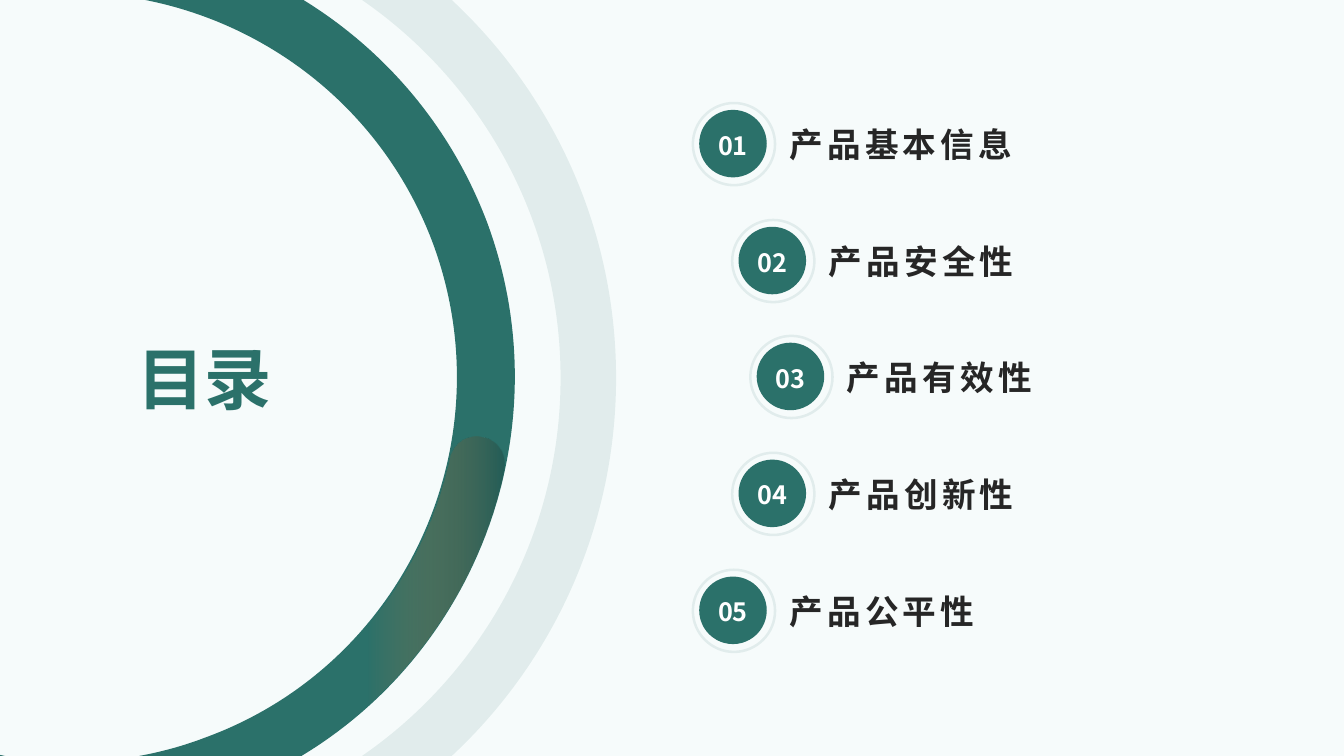
from lxml import etree
from pptx import Presentation
from pptx import util as u
from pptx.dml import color
from pptx.enum import shapes, text
from pptx.oxml import ns

TITLE = "目录"
ENTRIES = [
    ("产品基本信息", 686, 101),
    ("产品安全性", 725, 217),
    ("产品有效性", 743, 332),
    ("产品创新性", 725, 448),
    ("产品公平性", 686, 564),
]
COLORS = {
    "page": "F6FBFB",
    "teal": "2B716A",
    "ink": "262626",
    "white": "FFFFFF",
    "orange": "D77C38",
    "deep": "205550",
}
FONT = "Noto Sans CJK SC"
PX = 9144
FINE = 10
RING_RADII = (39.5, 42)
DOT = 67
KAPPA = 0.55

OUTER_ARC = [
    [(359, 750), (448, 750), (548, 657, 611, 523, 611, 375),
     (611, 227, 548, 93, 448, 0), (359, 0),
     (478, 82, 556, 220, 556, 375), (556, 530, 478, 668, 359, 750)],
]
INNER_ARC = [
    [(0, 749), (0, 750), (5, 750), (3, 750, 2, 749, 0, 749)],
    [(138, 750), (160, 746, 182, 740, 203, 732),
     (401, 660, 502, 441, 430, 243), (382, 113, 271, 25, 144, 0),
     (301, 0), (382, 50, 448, 126, 484, 223),
     (557, 424, 475, 644, 299, 750)],
]
HIGHLIGHT = [
    [(446, 455), (419, 579, 332, 686, 204, 733),
     (184, 740, 164, 746, 143, 750), (297, 750),
     (403, 687, 475, 583, 500, 467), (503, 452, 494, 437, 479, 434),
     (464, 430, 449, 440, 446, 455)],
    [(1, 750), (0, 750)],
]


def rgb(name):
    return color.RGBColor.from_string(COLORS[name])


def px(*lengths):
    return [round(length * PX) for length in lengths]


def circle(x, y, r):
    k = r * KAPPA
    return [(x, y + r),
            (x + k, y + r, x + r, y + k, x + r, y),
            (x + r, y - k, x + k, y - r, x, y - r),
            (x - k, y - r, x - r, y - k, x - r, y),
            (x - r, y + k, x - k, y + r, x, y + r)]


def set_alphas(shape, *percents):
    tones = shape.element.spPr.iter(ns.qn("a:srgbClr"))
    for tone, percent in zip(tones, percents):
        etree.SubElement(tone, ns.qn("a:alpha")).set("val", str(percent * 1000))


def paint(shape, fill=None, alpha=None):
    shape.shadow.inherit = False
    shape.line.fill.background()
    if fill:
        shape.fill.solid()
        shape.fill.fore_color.rgb = rgb(fill)
    if alpha is not None:
        set_alphas(shape, alpha)
    return shape


def add_outline(page, contours):
    contours = [[[round(n * FINE) for n in step] for step in contour]
                for contour in contours]
    anchors = [[step[-2:] for step in contour] for contour in contours]
    builder = page.shapes.build_freeform(*anchors[0][0], scale=PX / FINE)
    for index, points in enumerate(anchors):
        if index:
            builder.move_to(*points[0])
        builder.add_line_segments(points[1:], close=True)
    shape = builder.convert_to_shape()

    left = min(x for points in anchors for x, y in points)
    top = min(y for points in anchors for x, y in points)
    segments = list(shape.element.iter(ns.qn("a:lnTo")))
    steps = [step for contour in contours for step in contour[1:]]
    for segment, step in zip(segments, steps):
        if len(step) == 6:
            curve = etree.Element(ns.qn("a:cubicBezTo"))
            for x, y in zip(step[::2], step[1::2]):
                point = etree.SubElement(curve, ns.qn("a:pt"))
                point.set("x", str(x - left))
                point.set("y", str(y - top))
            segment.getparent().replace(segment, curve)
    return shape


def write(box, words, size, tone, align=text.PP_ALIGN.LEFT, wrap=True,
          leading=None, tracking=None):
    frame = box.text_frame
    frame.auto_size = text.MSO_AUTO_SIZE.NONE
    frame.word_wrap = wrap
    frame.vertical_anchor = text.MSO_ANCHOR.MIDDLE
    frame.margin_left = frame.margin_right = 0
    frame.margin_top = frame.margin_bottom = 0
    para = frame.paragraphs[0]
    para.alignment = align
    if leading:
        para.line_spacing = leading
    span = para.add_run()
    span.text = words
    span.font.name = FONT
    span.font.size = u.Pt(size)
    span.font.bold = True
    span.font.color.rgb = rgb(tone)
    for props in box.element.iter(ns.qn("a:rPr")):
        etree.SubElement(props, ns.qn("a:ea")).set("typeface", FONT)
        if tracking:
            props.set("spc", str(tracking * 100))


def add_entry(page, number, words, left, top):
    middle = RING_RADII[-1]
    ring = add_outline(page, [circle(left + middle, top + middle, r) for r in RING_RADII])
    paint(ring, "teal", 10)
    dot = page.shapes.add_shape(shapes.MSO_SHAPE.OVAL, *px(left + 7.5, top + 8, DOT, DOT))
    paint(dot, "teal")
    write(dot, f"{number:02d}", 18, "white", align=text.PP_ALIGN.CENTER,
          wrap=False, leading=1.1)
    label = page.shapes.add_textbox(*px(left + 97, top + 14, 405, 56))
    write(label, words, 24, "ink", tracking=3)


def main():
    deck = Presentation()
    deck.slide_width, deck.slide_height = px(1333, 750)
    page = deck.slides.add_slide(deck.slide_layouts[5])
    page.background.fill.solid()
    page.background.fill.fore_color.rgb = rgb("page")

    outer = paint(add_outline(page, OUTER_ARC), "teal", 10)
    inner = paint(add_outline(page, INNER_ARC), "teal")
    glow = paint(add_outline(page, HIGHLIGHT))
    glow.fill.gradient()
    glow.fill.gradient_angle = 0
    stops = ((0.73, "orange"), (1.0, "deep"))
    for stop, (position, tone) in zip(glow.fill.gradient_stops, stops):
        stop.position = position
        stop.color.rgb = rgb(tone)
    set_alphas(glow, 0, 70)

    title = page.shapes.title
    title.left, title.top, title.width, title.height = px(136, 303, 291, 144)
    write(title, TITLE, 48, "teal")
    for band in (outer, inner, glow):
        title.element.addprevious(band.element)

    for number, (words, left, top) in enumerate(ENTRIES, 1):
        add_entry(page, number, words, left, top)

    deck.save("out.pptx")


if __name__ == "__main__":
    main()
